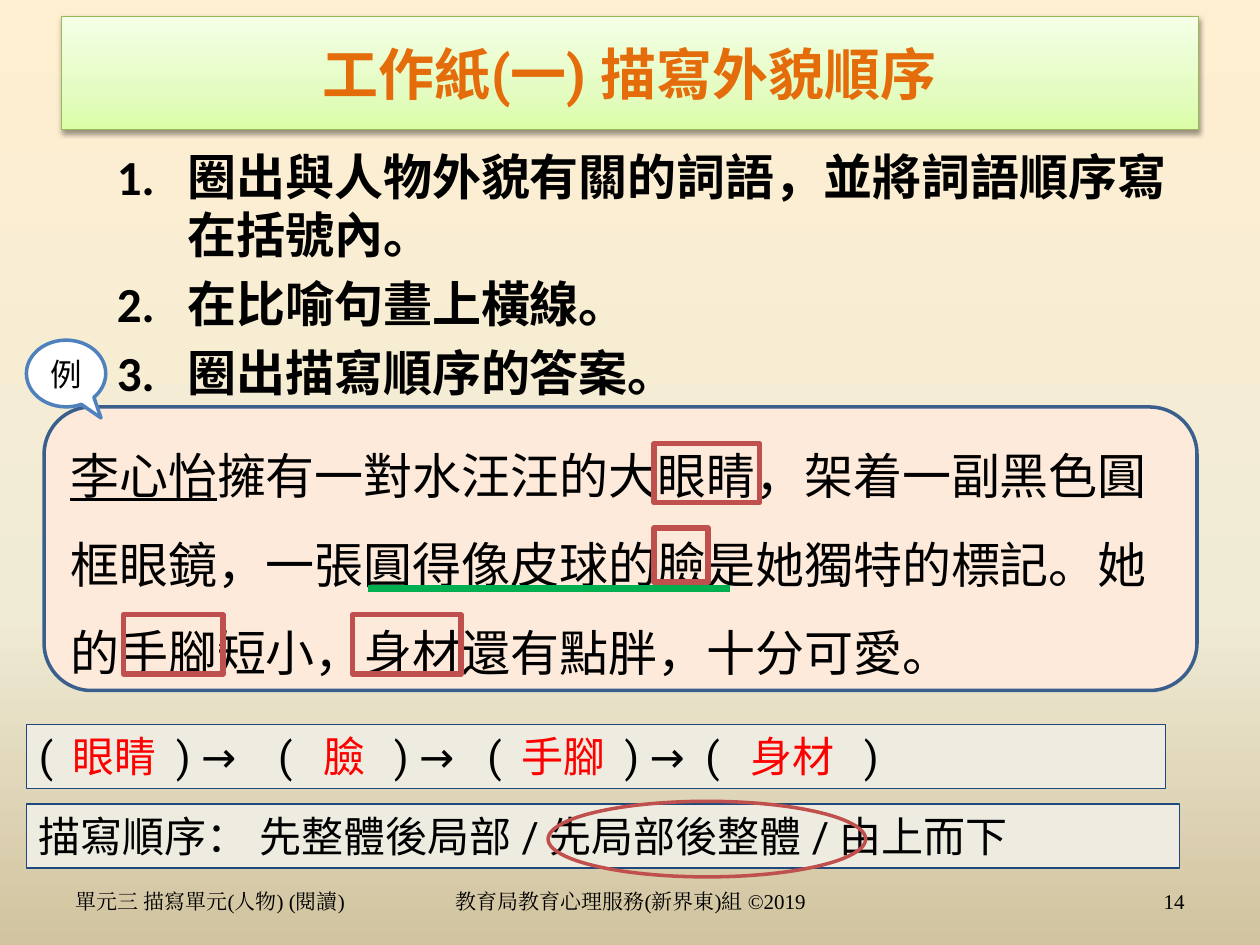
from lxml import etree
from pptx import Presentation
from pptx.dml.color import RGBColor
from pptx.enum import shapes, text
from pptx.oxml import ns
from pptx.util import Inches, Pt

COLORS = {
    "black": "000000", "answer": "FF0000", "title": "E46C0A", "title_edge": "98B955",
    "band": "EEECE1", "band_edge": "1F497D", "passage": "FDEADA", "passage_edge": "3A5F8C",
    "mark": "C0504D", "simile": "00B050", "white": "FFFFFF", "callout_edge": "4F81BD",
}
BACKGROUND = [(0, "FFEFD1"), (65, "F0EBD5"), (100, "D1C39F")]
TITLE_FILL = [(0, "DAFDA7"), (35, "E4FCC2"), (100, "F5FFE7")]
SHAPE = shapes.MSO_SHAPE
ALIGN = text.PP_ALIGN
MIDDLE = text.MSO_ANCHOR.MIDDLE
GROW = text.MSO_AUTO_SIZE.SHAPE_TO_FIT_TEXT

INSTRUCTIONS = ["圈出與人物外貌有關的詞語，並將詞語順序寫在括號內。",
                "在比喻句畫上橫線。", "圈出描寫順序的答案。"]
PASSAGE = [("李心怡", {"underline": True}),
           ("擁有一對水汪汪的大眼睛，架着一副黑色圓框眼鏡，一張圓得像皮球的臉是她獨特的標記。"
            "她的手腳短小，身材還有點胖，十分可愛。", {})]
ANSWERS = ["眼睛", "臉", "手腳", "身材"]
ANSWER_TABS = [0.27, 1.09, 1.9, 2.26, 2.82, 3.56, 3.83, 4.65, 5.29, 5.65, 6.55]
WORD_MARKS = [(5.19, 3.52, 0.84, 0.47), (5.19, 4.19, 0.43, 0.43),
              (2.8, 4.88, 0.86, 0.47), (0.98, 4.88, 0.79, 0.47)]
FOOTERS = [((0.5, 6.95, 2.85, 0.4), "單元三 描寫單元(人物) (閱讀)", ALIGN.LEFT),
           ((3.42, 6.95, 3.17, 0.4), "教育局教育心理服務(新界東)組 ©2019", ALIGN.CENTER),
           ((7.17, 6.95, 2.33, 0.4), "14", ALIGN.RIGHT)]


def rgb(name):
    return RGBColor.from_string(COLORS[name])


def add_element(parent, tag, **attributes):
    child = etree.SubElement(parent, ns.qn(tag))
    for key, value in attributes.items():
        child.set(key, str(value))
    return child


def set_gradient(fill, owner, stops, angle):
    """Fill owner with (percent, hex) stops; angle is clockwise degrees."""
    fill.gradient()
    gradient = owner.xpath(".//a:gradFill")[0]
    stop_list = gradient.find(ns.qn("a:gsLst"))
    for old_stop in list(stop_list):
        stop_list.remove(old_stop)
    for percent, color in stops:
        stop = add_element(stop_list, "a:gs", pos=percent * 1000)
        add_element(stop, "a:srgbClr", val=color)
    gradient.find(ns.qn("a:lin")).set("ang", str(angle * 60000))


def add_panel(slide, kind, box, edge, width, fill=None):
    panel = slide.shapes.add_shape(kind, *map(Inches, box))
    panel.shadow.inherit = False
    panel.line.color.rgb = rgb(edge)
    panel.line.width = Pt(width)
    if fill:
        panel.fill.solid()
        panel.fill.fore_color.rgb = rgb(fill)
    else:
        panel.fill.background()
    return panel


def write(holder, paragraphs, size, font, color="black", bold=False, align=ALIGN.LEFT, **frame):
    """Write lists of (words, font values) runs and return the paragraphs."""
    body = holder.text_frame
    for key, value in {"word_wrap": True, **frame}.items():
        setattr(body, key, value)
    for index, runs in enumerate(paragraphs):
        paragraph = body.add_paragraph() if index else body.paragraphs[0]
        paragraph.alignment = align
        for words, values in runs:
            run = paragraph.add_run()
            run.text = words
            run.font.color.rgb = rgb(values.get("color", color))
            style = {"size": Pt(size), "name": font, "bold": bold,
                     "underline": values.get("underline", False)}
            for key, value in style.items():
                setattr(run.font, key, value)
            add_element(run.font._element, "a:ea", typeface=font)
    return body.paragraphs


def add_title(slide):
    title = add_panel(slide, SHAPE.RECTANGLE, (0.49, 0.13, 9.02, 0.9), "title_edge", 0.75)
    set_gradient(title.fill, title._element, TITLE_FILL, 270)
    effects = title._element.spPr.find(ns.qn("a:effectLst"))
    shadow = add_element(effects, "a:outerShdw", blurRad=Pt(3.1), dist=Pt(1.6),
                         dir=90 * 60000, rotWithShape=0)
    shade = add_element(shadow, "a:srgbClr", val=COLORS["black"])
    add_element(shade, "a:alpha", val=38000)
    write(title, [[("工作紙(一) 描寫外貌順序", {})]], 32, "Roboto", "title", True,
          ALIGN.CENTER, vertical_anchor=MIDDLE)


def add_instructions(slide):
    box = slide.shapes.add_textbox(*map(Inches, (0.83, 1.11, 8.67, 2.17)))
    lines = [[(line, {})] for line in INSTRUCTIONS]
    for paragraph in write(box, lines, 28, "Calibri", bold=True, auto_size=GROW):
        paragraph.space_before = Pt(5.6)
        properties = paragraph._p.get_or_add_pPr()
        properties.set("marL", str(Inches(0.56)))
        properties.set("indent", str(-Inches(0.56)))
        add_element(properties, "a:buFont", typeface="Calibri")
        add_element(properties, "a:buAutoNum", type="arabicPeriod")


def add_passage(slide):
    passage = add_panel(slide, SHAPE.ROUNDED_RECTANGLE, (0.35, 3.23, 9.15, 2.25),
                        "passage_edge", 2, "passage")
    write(passage, [PASSAGE], 28, "Roboto", vertical_anchor=MIDDLE)[0].line_spacing = 1.5


def add_simile_line(slide):
    line = slide.shapes.add_connector(shapes.MSO_CONNECTOR.STRAIGHT,
                                      *map(Inches, (2.92, 4.67, 5.79, 4.67)))
    line.line.color.rgb = rgb("simile")
    line.line.width = Pt(4)
    add_element(line._element.spPr, "a:effectLst")


def add_band(slide, box, runs):
    band = add_panel(slide, SHAPE.RECTANGLE, box, "band_edge", 0.75, "band")
    return write(band, [runs], 24, "Roboto", auto_size=GROW,
                 vertical_anchor=text.MSO_ANCHOR.TOP)[0]


def add_answers(slide):
    runs = [("(\t", {})]
    for answer in ANSWERS:
        closing = ")" if answer == ANSWERS[-1] else ") →\t(\t"
        runs += [(answer + "\t", {"color": "answer"}), (closing, {})]
    paragraph = add_band(slide, (0.21, 5.75, 9.04, 0.51), runs)
    tab_list = add_element(paragraph._p.get_or_add_pPr(), "a:tabLst")
    for position in ANSWER_TABS:
        add_element(tab_list, "a:tab", pos=Inches(position), algn="l")


def add_example_callout(slide):
    callout = add_panel(slide, SHAPE.OVAL_CALLOUT, (0.21, 2.7, 0.63, 0.53),
                        "callout_edge", 2, "white")
    callout.adjustments[0] = 0.44
    callout.adjustments[1] = 0.665
    write(callout, [[("例", {})]], 18, "Noto Sans CJK SC", align=ALIGN.CENTER,
          vertical_anchor=MIDDLE)


def main():
    deck = Presentation()
    deck.slide_width, deck.slide_height = Inches(10), Inches(7.5)
    slide = deck.slides.add_slide(deck.slide_layouts[6])
    set_gradient(slide.background.fill, slide._element, BACKGROUND, 90)
    add_band(slide, (0.21, 6.38, 9.15, 0.51),
             [("描寫順序： 先整體後局部 / 先局部後整體 / 由上而下", {})])
    add_title(slide)
    add_instructions(slide)
    add_passage(slide)
    for box in WORD_MARKS:
        add_panel(slide, SHAPE.RECTANGLE, box, "mark", 3)
    add_simile_line(slide)
    for box, words, align in FOOTERS:
        footer = slide.shapes.add_textbox(*map(Inches, box))
        write(footer, [[(words, {})]], 12, "Times New Roman", align=align,
              vertical_anchor=MIDDLE)
    add_answers(slide)
    add_panel(slide, SHAPE.OVAL, (4.35, 6.36, 2.52, 0.6), "mark", 2)
    add_example_callout(slide)
    deck.save("out.pptx")


if __name__ == "__main__":
    main()
